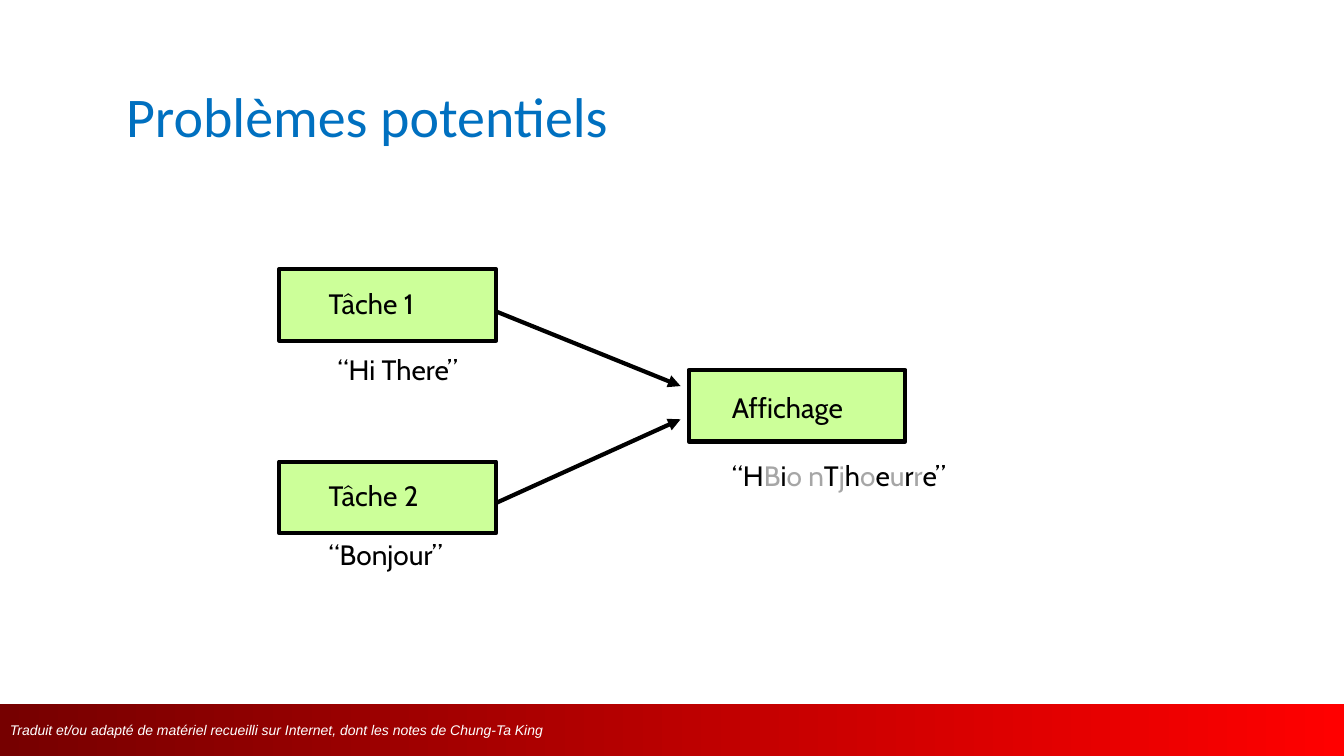
from dataclasses import dataclass

from lxml.etree import SubElement
from pptx import Presentation
from pptx.dml.color import RGBColor
from pptx.enum.shapes import MSO_CONNECTOR, MSO_SHAPE
from pptx.enum.text import MSO_ANCHOR, PP_ALIGN
from pptx.oxml.ns import qn
from pptx.util import Inches, Pt

BLACK = RGBColor(0x00, 0x00, 0x00)
WHITE = RGBColor(0xFF, 0xFF, 0xFF)
GREY = RGBColor(0xA6, 0xA6, 0xA6)
GREEN = RGBColor(0xCC, 0xFF, 0x99)
BLUE = RGBColor(0x00, 0x70, 0xC0)
DARK_RED = RGBColor(0x76, 0x00, 0x00)
RED = RGBColor(0xFF, 0x00, 0x00)

BOX_W, BOX_H = 2.15, 0.71
LABEL_H = 0.44


@dataclass
class Box:
    left: float
    top: float


@dataclass
class Label:
    pieces: list[str]  # black and grey pieces alternate
    left: float
    top: float
    width: float


@dataclass
class Arrow:
    start: tuple[float, float]
    end: tuple[float, float]


BOXES = [Box(2.77, 2.67), Box(2.77, 4.58), Box(6.83, 3.67)]
LABELS = [
    Label(["Tâche 1"], 3.16, 2.79, 1.19),
    Label(["Tâche 2"], 3.16, 4.7, 1.19),
    Label(["“Hi There”"], 3.25, 3.45, 1.48),
    Label(["“Bonjour”"], 3.16, 5.28, 1.39),
    Label(["Affichage"], 7.16, 3.83, 1.35),
    Label(["“H", "B", "i", "o n", "T", "j", "h", "o", "e", "u", "r", "r", "e”"],
          7.16, 4.5, 2.45),
]
ARROWS = [Arrow((4.92, 3.09), (6.75, 3.83)), Arrow((4.92, 4.99), (6.75, 4.16))]


def write(tf, pieces: list[str], *, font: str, size: float, colors: list[RGBColor],
          italic: bool = False, wrap: bool = False, anchor=MSO_ANCHOR.TOP) -> None:
    """Write one left-aligned paragraph, cycling the colours over its pieces."""
    tf.word_wrap = wrap
    tf.vertical_anchor = anchor
    p = tf.paragraphs[0]
    p.alignment = PP_ALIGN.LEFT
    for i, piece in enumerate(pieces):
        r = p.add_run()
        r.text = piece
        r.font.name = font
        r.font.size = Pt(size)
        r.font.italic = italic
        r.font.color.rgb = colors[i % len(colors)]


def add_footer(slide) -> None:
    sp = slide.shapes.add_shape(MSO_SHAPE.RECTANGLE, 0, Inches(6.98),
                                Inches(13.33), Inches(0.52))
    sp.shadow.inherit = False
    sp.line.fill.background()
    sp.fill.gradient()
    sp.fill.gradient_angle = 0
    for stop, color in zip(sp.fill.gradient_stops, (DARK_RED, RED)):
        stop.color.rgb = color
    write(sp.text_frame,
          ["Traduit et/ou adapté de matériel recueilli sur Internet, "
           "dont les notes de Chung-Ta King"],
          font="Arial", size=10, colors=[WHITE], italic=True, anchor=MSO_ANCHOR.MIDDLE)


def add_box(slide, box: Box) -> None:
    sp = slide.shapes.add_shape(MSO_SHAPE.RECTANGLE, Inches(box.left), Inches(box.top),
                                Inches(BOX_W), Inches(BOX_H))
    sp.shadow.inherit = False
    sp.fill.solid()
    sp.fill.fore_color.rgb = GREEN
    sp.line.color.rgb = BLACK
    sp.line.width = Pt(3)


def add_label(slide, label: Label) -> None:
    sp = slide.shapes.add_textbox(Inches(label.left), Inches(label.top),
                                  Inches(label.width), Inches(LABEL_H))
    write(sp.text_frame, label.pieces, font="Cabin", size=20, colors=[BLACK, GREY])


def add_arrow(slide, arrow: Arrow) -> None:
    ends = [Inches(v) for v in (*arrow.start, *arrow.end)]
    cxn = slide.shapes.add_connector(MSO_CONNECTOR.STRAIGHT, *ends)
    cxn.line.color.rgb = BLACK
    cxn.line.width = Pt(3)
    props = cxn.element.spPr
    SubElement(props.find(qn("a:ln")), qn("a:tailEnd"), type="triangle")
    SubElement(props, qn("a:effectLst"))


def main() -> None:
    prs = Presentation()
    prs.slide_width, prs.slide_height = Inches(13.33), Inches(7.5)
    slide = prs.slides.add_slide(prs.slide_layouts[5])

    # Title
    title = slide.shapes.title
    title.left, title.top = Inches(1.15), Inches(0.57)
    title.width, title.height = Inches(9.41), Inches(1.15)
    write(title.text_frame, ["Problèmes potentiels"], font="Calibri", size=40,
          colors=[BLUE], wrap=True, anchor=MSO_ANCHOR.MIDDLE)

    # Footer band
    add_footer(slide)

    # Two tasks sharing one display
    for box in BOXES:
        add_box(slide, box)
    for arrow in ARROWS:
        add_arrow(slide, arrow)
    for label in LABELS:
        add_label(slide, label)

    prs.save("out.pptx")


if __name__ == "__main__":
    main()
